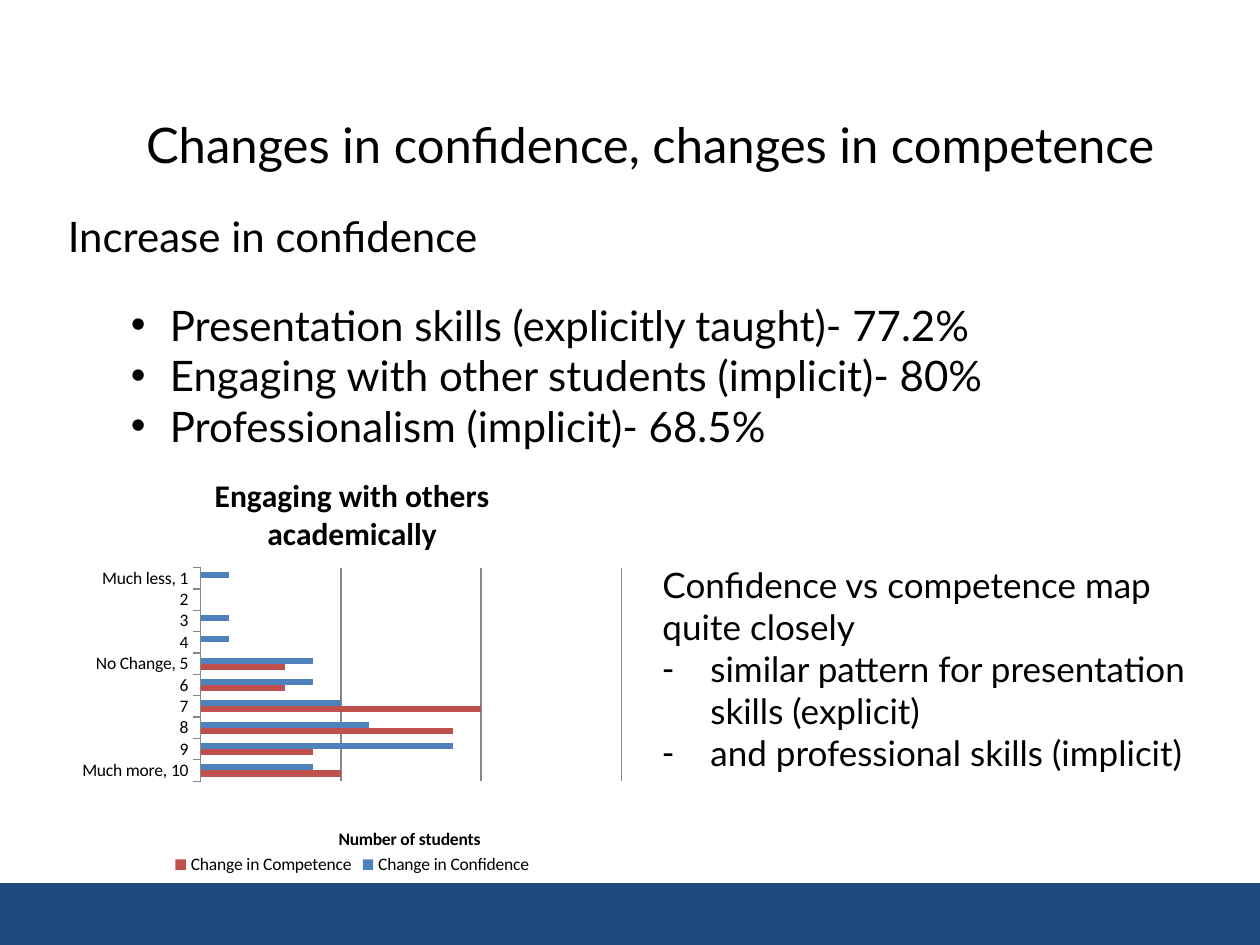
from lxml import etree
from pptx import Presentation
from pptx.chart.data import CategoryChartData
from pptx.dml.color import RGBColor
from pptx.enum.chart import XL_CHART_TYPE, XL_LEGEND_POSITION, XL_TICK_LABEL_POSITION, XL_TICK_MARK
from pptx.enum.shapes import MSO_SHAPE
from pptx.enum.text import MSO_ANCHOR, PP_ALIGN
from pptx.oxml.ns import qn
from pptx.util import Inches, Pt

BAR_CLUSTERED = XL_CHART_TYPE.BAR_CLUSTERED
LEGEND_BOTTOM = XL_LEGEND_POSITION.BOTTOM
LABELS_LOW = XL_TICK_LABEL_POSITION.LOW
TICK_OUTSIDE = XL_TICK_MARK.OUTSIDE
TICK_NONE = XL_TICK_MARK.NONE
RECTANGLE = MSO_SHAPE.RECTANGLE
TOP, MIDDLE = MSO_ANCHOR.TOP, MSO_ANCHOR.MIDDLE
LEFT, CENTER = PP_ALIGN.LEFT, PP_ALIGN.CENTER

BLACK = RGBColor(0x00, 0x00, 0x00)
NAVY = RGBColor(0x1F, 0x49, 0x7D)
BLUE = RGBColor(0x4F, 0x81, 0xBD)
RED = RGBColor(0xC0, 0x50, 0x4D)
GRAY = RGBColor(0x86, 0x86, 0x86)

TEXT_FONT = "Lato"
CHART_FONT = "Calibri"

CATEGORIES = ["Much less, 1", "2", "3", "4", "No Change, 5",
              "6", "7", "8", "9", "Much more, 10"]
SERIES = [
    ("Change in Confidence", BLUE, [10, 0, 10, 10, 40, 40, 50, 60, 90, 40]),
    ("Change in Competence", RED, [0, 0, 0, 0, 30, 30, 100, 90, 40, 50]),
]


def add_band(page, left, top, width, height, color):
    band = page.shapes.add_shape(RECTANGLE, Inches(left), Inches(top),
                                 Inches(width), Inches(height))
    band.shadow.inherit = False
    band.fill.solid()
    band.fill.fore_color.rgb = color
    band.line.fill.background()


def add_box(page, left, top, width, height, anchor=TOP):
    box = page.shapes.add_textbox(Inches(left), Inches(top),
                                  Inches(width), Inches(height))
    box.text_frame.word_wrap = True
    box.text_frame.vertical_anchor = anchor
    return box.text_frame


def add_para(frame, text, size, align=LEFT, bullet=None, margin=0, hanging=0, before=0):
    para = frame.paragraphs[0]
    if para.runs:
        para = frame.add_paragraph()
    para.alignment = align
    if before:
        para.space_before = Pt(before)
    if bullet:
        properties = para._p.get_or_add_pPr()
        properties.set("marL", str(Inches(margin)))
        properties.set("indent", str(-Inches(hanging)))
        etree.SubElement(properties, qn("a:buFont"), typeface="Arial")
        etree.SubElement(properties, qn("a:buChar"), char=bullet)
    span = para.add_run()
    span.text = text
    set_font(span.font, size, name=TEXT_FONT)


def set_font(font, size, name=CHART_FONT, bold=False):
    font.name = name
    font.size = Pt(size)
    font.bold = bold
    font.color.rgb = BLACK


def set_title(owner, text, size):
    frame = owner.text_frame
    frame.text = text
    set_font(frame.paragraphs[0].runs[0].font, size, bold=True)


def place(element, **places):
    for old in element.findall(qn("c:layout")):
        element.remove(old)
    layout = etree.Element(qn("c:layout"))
    manual = etree.SubElement(layout, qn("c:manualLayout"))
    if "w" in places:
        etree.SubElement(manual, qn("c:layoutTarget"), val="inner")
    for mode in ("xMode", "yMode"):
        etree.SubElement(manual, qn("c:" + mode), val="edge")
    for key, value in places.items():
        etree.SubElement(manual, qn("c:" + key), val=str(value))
    text = element.find(qn("c:tx"))
    element.insert(0 if text is None else 1, layout)


def add_bar_chart(page, left, top, width, height):
    data = CategoryChartData()
    data.categories = CATEGORIES
    for name, _, values in SERIES:
        data.add_series(name, values)
    chart = page.shapes.add_chart(BAR_CLUSTERED, Inches(left), Inches(top),
                                  Inches(width), Inches(height), data).chart
    set_font(chart.font, 10)
    chart.has_title = True
    set_title(chart.chart_title, "Engaging with others academically", 18)
    chart.has_legend = True
    chart.legend.position = LEGEND_BOTTOM
    chart.legend.include_in_layout = False

    plot = chart.plots[0]
    plot.vary_by_categories = False
    plot.gap_width = 150
    for series, (_, color, _) in zip(plot.series, SERIES):
        series.format.fill.solid()
        series.format.fill.fore_color.rgb = color

    categories = chart.category_axis
    categories.reverse_order = True
    categories.major_tick_mark = TICK_OUTSIDE
    categories.minor_tick_mark = TICK_NONE
    categories.tick_label_position = LABELS_LOW
    categories.format.line.color.rgb = GRAY

    scale = chart.value_axis
    scale.minimum_scale, scale.maximum_scale, scale.major_unit = 0, 150, 50
    scale.has_major_gridlines = True
    scale.major_gridlines.format.line.color.rgb = GRAY
    set_title(scale.axis_title, "Number of students", 10)
    place(scale.axis_title._element, x=0.47, y=0.87)
    scale.visible = False
    place(chart._chartSpace.chart.plotArea, x=0.23, y=0.27, w=0.75, h=0.5)


def main():
    deck = Presentation()
    deck.slide_width, deck.slide_height = Inches(10), Inches(7.5)
    page = deck.slides.add_slide(deck.slide_layouts[6])

    add_band(page, -0.02, 7.01, 10.02, 0.52, NAVY)
    title = add_box(page, 0.66, 0.84, 9, 0.6, anchor=MIDDLE)
    add_para(title, "Changes in confidence, changes in competence", 28, align=CENTER)

    add_bar_chart(page, 0.57, 3.59, 4.45, 3.39)

    comparison = add_box(page, 5.16, 4.42, 4.54, 2.08)
    add_para(comparison, "Confidence vs competence map quite closely", 20)
    for text in ("similar pattern for presentation skills (explicit)",
                 "and professional skills (implicit)"):
        add_para(comparison, text, 20, bullet="-", margin=0.38, hanging=0.38)

    increases = add_box(page, 0.44, 1.62, 9, 2.02)
    add_para(increases, "Increase in confidence", 24)
    skills = ["Presentation skills (explicitly taught)- 77.2%",
              "Engaging with other students (implicit)- 80%",
              "Professionalism (implicit)- 68.5%"]
    for index, text in enumerate(skills):
        add_para(increases, text, 24, bullet="•", margin=0.81, hanging=0.31,
                 before=0 if index else 22)

    deck.save("out.pptx")


if __name__ == "__main__":
    main()
